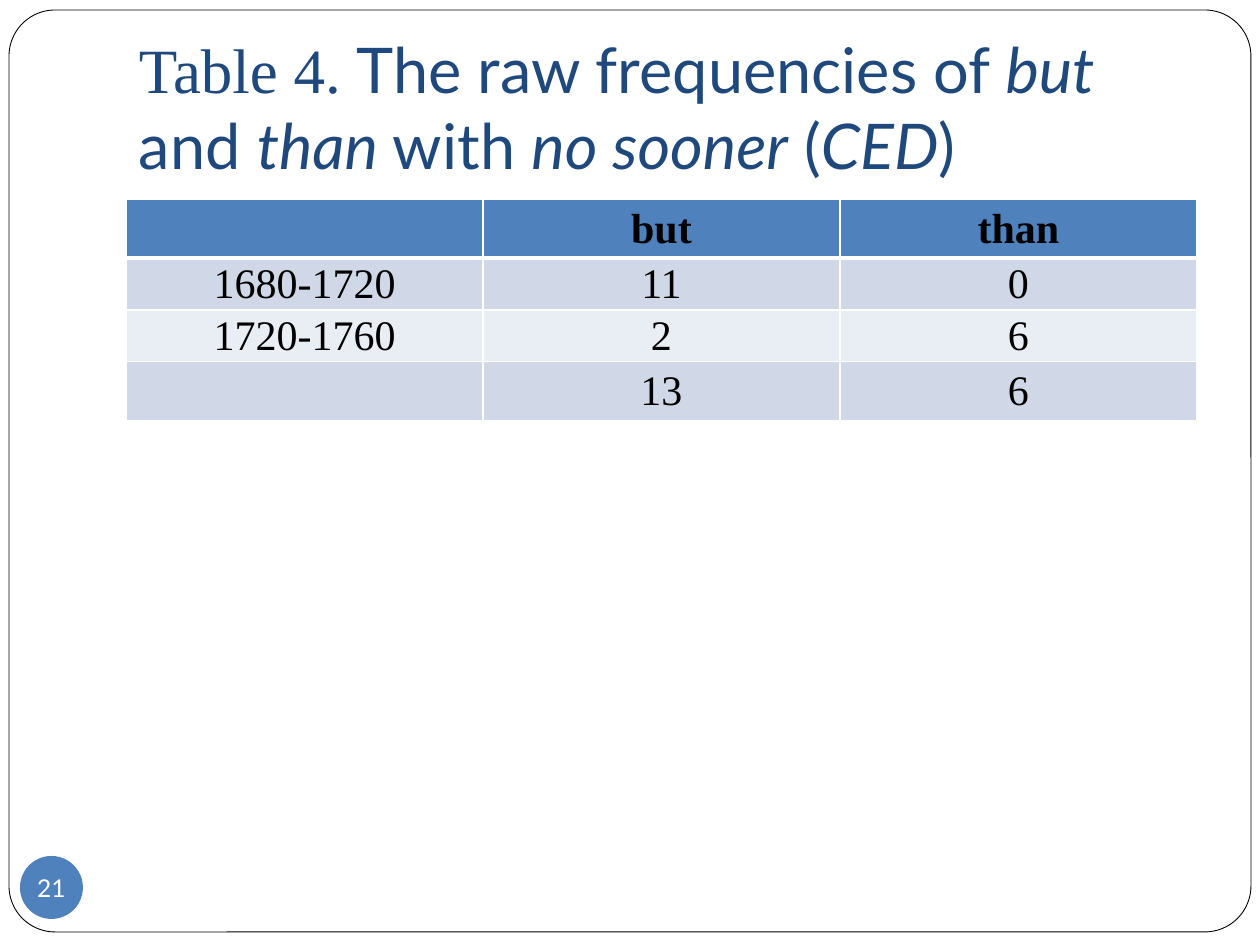
from lxml import etree
from pptx import Presentation
from pptx import util as u
from pptx.dml.color import RGBColor
from pptx.enum import shapes, text
from pptx.oxml import ns

PX = u.Inches(1) / 126
SERIF, SANS = "Times New Roman", "Lato"
NAVY, BLUE, WHITE, BLACK = "1F497D", "4F81BD", "FFFFFF", "000000"
BANDS = ("D0D8E8", "E9EDF4")

TITLE = [("Table 4. ", SERIF, False), ("The raw frequencies of ", SANS, False),
         ("but", SANS, True), (" and ", SANS, False), ("than", SANS, True),
         (" with ", SANS, False), ("no sooner", SANS, True), (" (", SANS, False),
         ("CED", SANS, True), (")", SANS, False)]
FREQUENCIES = [("", "but", "than"),
               ("1680-1720", "11", "0"),
               ("1720-1760", "2", "6"),
               ("", "13", "6")]


def px(length):
    return u.Emu(round(length * PX))


def rgb(value):
    return RGBColor.from_string(value)


def set_all(target, values):
    for name, value in values.items():
        setattr(target, name, value)


def set_margins(target, left, top, right, bottom):
    set_all(target, {"margin_left": px(left), "margin_top": px(top),
                     "margin_right": px(right), "margin_bottom": px(bottom)})


def add_run(paragraph, words, face, size, color, **style):
    run = paragraph.add_run()
    run.text = words
    set_all(run.font, {"name": face, "size": u.Pt(size), **style})
    run.font.color.rgb = rgb(color)


def add_solid(slide, kind, box, fill):
    solid = slide.shapes.add_shape(kind, *map(px, box))
    solid.shadow.inherit = False
    solid.fill.solid()
    solid.fill.fore_color.rgb = rgb(fill)
    return solid


def place_frame(slide, box):
    frame = add_solid(slide, shapes.MSO_SHAPE.ROUNDED_RECTANGLE, box, WHITE)
    frame.adjustments[0] = 0.05
    frame.line.color.rgb = rgb(BLACK)
    frame.line.width = u.Pt(0.5)
    # The frame lies behind the title
    slide.shapes.title._element.addprevious(frame._element)


def place_title(slide, box):
    title = slide.shapes.title
    set_all(title, dict(zip(("left", "top", "width", "height"), map(px, box))))
    body = title.text_frame
    set_all(body, {"word_wrap": True, "auto_size": text.MSO_AUTO_SIZE.NONE,
                   "vertical_anchor": text.MSO_ANCHOR.BOTTOM})
    set_margins(body, 13, 6, 13, 13)
    heading = body.paragraphs[0]
    heading.alignment = text.PP_ALIGN.LEFT
    for words, face, italic in TITLE:
        add_run(heading, words, face, 36, NAVY, italic=italic)


def place_page_number(slide, box, number):
    badge = add_solid(slide, shapes.MSO_SHAPE.OVAL, box, BLUE)
    badge.line.fill.background()
    body = badge.text_frame
    set_all(body, {"word_wrap": False, "vertical_anchor": text.MSO_ANCHOR.MIDDLE})
    set_margins(body, 0, 0, 0, 0)
    body.paragraphs[0].alignment = text.PP_ALIGN.CENTER
    add_run(body.paragraphs[0], number, SANS, 14, WHITE)


def set_borders(cell, widths):
    properties = cell._tc.get_or_add_tcPr()
    for index, (side, width) in enumerate(widths.items()):
        line = etree.Element(ns.qn(f"a:ln{side}"), w=str(u.Pt(width)))
        fill = etree.SubElement(line, ns.qn("a:solidFill"))
        etree.SubElement(fill, ns.qn("a:srgbClr"), val=WHITE)
        properties.insert(index, line)


def fill_cell(cell, words, is_header):
    paragraph = cell.text_frame.paragraphs[0]
    if words:
        cell.vertical_anchor = text.MSO_ANCHOR.MIDDLE
        set_margins(cell, 1, 1, 1, 0)
        paragraph.alignment = text.PP_ALIGN.CENTER
        add_run(paragraph, words, SERIF, 24, BLACK, bold=is_header)
    else:
        # A blank cell keeps the text size, which sets its row's height
        end = etree.SubElement(paragraph._p, ns.qn("a:endParaRPr"), sz="2400")
        etree.SubElement(end, ns.qn("a:latin"), typeface=SERIF)


def place_frequencies(slide, box):
    rows, columns = len(FREQUENCIES), len(FREQUENCIES[0])
    table = slide.shapes.add_table(rows, columns, *map(px, box)).table
    for r, values in enumerate(FREQUENCIES):
        is_header = r == 0
        for c, words in enumerate(values):
            cell = table.cell(r, c)
            fill_cell(cell, words, is_header)
            cell.fill.solid()
            cell.fill.fore_color.rgb = rgb(BLUE if is_header else BANDS[(r - 1) % 2])
            set_borders(cell, {"L": 1, "R": 1, "T": 3 if r == 1 else 1,
                               "B": 3 if is_header else 1})


def main():
    deck = Presentation()
    set_all(deck, {"slide_width": px(1260), "slide_height": px(945)})
    slide = deck.slides.add_slide(deck.slide_layouts[5])
    place_frame(slide, (9, 10, 1242, 922))
    place_title(slide, (126, 38, 1071, 157))
    place_page_number(slide, (20, 856, 63, 63), "21")
    place_frequencies(slide, (126, 199, 1071, 207))
    deck.save("out.pptx")


if __name__ == "__main__":
    main()
